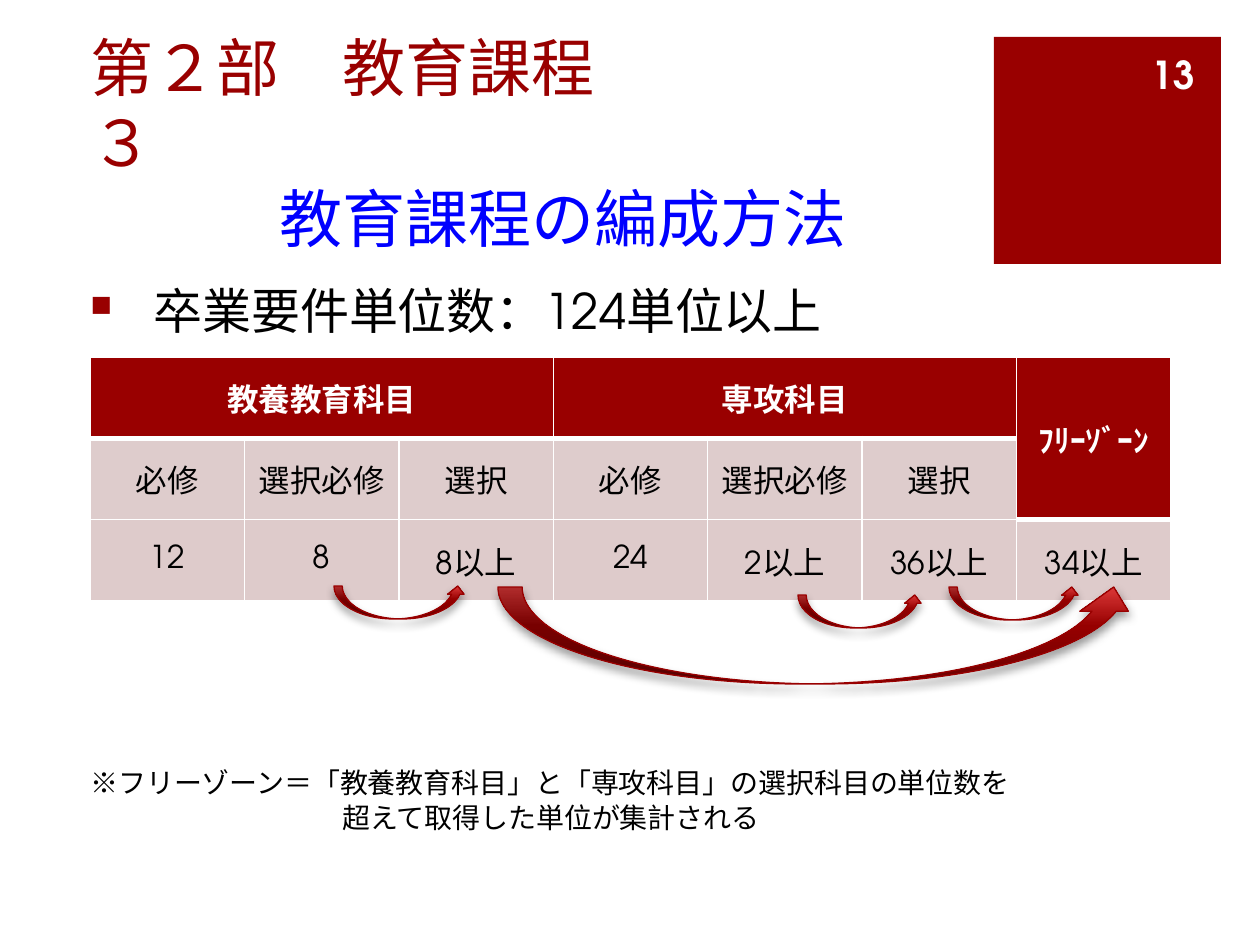
from lxml import etree
from copy import deepcopy
from pptx import Presentation
from pptx.dml.color import RGBColor
from pptx.enum.shapes import MSO_SHAPE
from pptx.enum.text import MSO_ANCHOR, PP_ALIGN
from pptx.oxml.ns import qn
from pptx.util import Emu, Pt

RECT, CURVED_UP = MSO_SHAPE.RECTANGLE, MSO_SHAPE.CURVED_UP_ARROW
MIDDLE, BOTTOM = MSO_ANCHOR.MIDDLE, MSO_ANCHOR.BOTTOM
LEFT, CENTER, RIGHT = PP_ALIGN.LEFT, PP_ALIGN.CENTER, PP_ALIGN.RIGHT
RED = RGBColor(0x99, 0x00, 0x00)
BLUE = RGBColor(0x00, 0x00, 0xFF)
BLACK = RGBColor(0x00, 0x00, 0x00)
WHITE = RGBColor(0xFF, 0xFF, 0xFF)
ROSE = RGBColor(0xDE, 0xCC, 0xCC)
ROSE_DARK = RGBColor(0xDE, 0xCB, 0xCB)
GRADIENT = [(0, RGBColor(0x6C, 0x00, 0x00)), (0.6, RGBColor(0x96, 0x00, 0x00)),
            (1, RGBColor(0xDC, 0x38, 0x38))]
FONT = "TeX Gyre Adventor"
HEADER = ["教養教育科目", "", "", "専攻科目", "", "", "ﾌﾘｰｿﾞｰﾝ"]
KINDS = ["必修", "選択必修", "選択"] * 2 + [""]
CREDITS = ["12", "8", "8以上", "24", "2以上", "36以上", "34以上"]
ARROWS = [(334, 586, 132, 33), (498, 587, 640, 97),
          (798, 595, 125, 33), (949, 587, 131, 33)]


def px(n):
    """Turn pixels at 126 to the inch into EMU."""
    return Emu(round(n * 914400 / 126))


def add_xml(parent, tag, **attrs):
    """Append a drawing element with the given attributes."""
    return etree.SubElement(parent, qn(tag), {k: str(v) for k, v in attrs.items()})


def write(p, text, align=LEFT, indent=0, spacing=None, **fmt):
    """Write one formatted run into a paragraph."""
    p.alignment = align
    if spacing:
        p.line_spacing = Pt(spacing)
    if indent:
        p._p.get_or_add_pPr().set("marL", str(px(indent)))
    r = p.add_run()
    r.text = text
    color = fmt.pop("color", BLACK)
    for name, value in {"name": FONT, **fmt}.items():
        setattr(r.font, name, value)
    r.font.color.rgb = color


def add_text(s, box, lines, anchor=MIDDLE):
    """Add a wrapping text box with one paragraph per line."""
    tf = s.shapes.add_textbox(*map(px, box)).text_frame
    tf.word_wrap = True
    tf.vertical_anchor = anchor
    for i, line in enumerate(lines):
        write(tf.add_paragraph() if i else tf.paragraphs[0], **line)
    return tf


def add_bullet(p, indent):
    """Give a paragraph a red square bullet with a hanging indent."""
    pPr = p._p.get_or_add_pPr()
    pPr.set("marL", str(px(indent)))
    pPr.set("indent", str(-px(indent)))
    add_xml(add_xml(pPr, "a:buClr"), "a:srgbClr", val=RED)
    add_xml(pPr, "a:buSzPct", val=60000)
    add_xml(pPr, "a:buChar", char="■")


def set_borders(cell, widths):
    """Draw white cell borders with a width in points for each side."""
    tcPr = cell._tc.get_or_add_tcPr()
    for i, (side, width) in enumerate(widths.items()):
        ln = add_xml(tcPr, f"a:ln{side}", w=Pt(width))
        add_xml(add_xml(ln, "a:solidFill"), "a:srgbClr", val=WHITE)
        tcPr.insert(i, ln)


def add_credit_table(s):
    """Add the table of required credits."""
    rows = [HEADER, KINDS, CREDITS]
    frame = s.shapes.add_table(3, 7, px(90), px(357), px(1081), px(244))
    table = frame.table
    for line in (*table.columns, *table.rows):
        if hasattr(line, "width"):
            line.width = Emu(px(1081) // 7)
        else:
            line.height = Emu(px(244) // 3)
    for i, row in enumerate(rows):
        for j, text in enumerate(row):
            cell = table.cell(i, j)
            depth = 2 if j == 6 else 1
            head = i < depth
            cell.vertical_anchor = MIDDLE
            cell.fill.solid()
            cell.fill.fore_color.rgb = RED if head else (ROSE, ROSE_DARK)[i - 1]
            set_borders(cell, {"L": 1, "R": 1, "T": 3 if i == depth else 1,
                               "B": 3 if head else 1})
            if text:
                write(cell.text_frame.paragraphs[0], text, CENTER, size=Pt(18),
                      bold=head, color=WHITE if head else BLACK)
    for first, last in [((0, 0), (0, 2)), ((0, 3), (0, 5)), ((0, 6), (1, 6))]:
        table.cell(*first).merge(table.cell(*last))


def add_block(s, box):
    """Add the plain red block behind the page number."""
    sp = s.shapes.add_shape(RECT, *map(px, box))
    sp.shadow.inherit = False
    sp.fill.solid()
    sp.fill.fore_color.rgb = RED
    sp.line.fill.background()


def add_curved_arrow(s, box):
    """Add a curved arrow with a red gradient and a soft shadow."""
    sp = s.shapes.add_shape(CURVED_UP, *map(px, box))
    sp.fill.gradient()
    sp.fill.gradient_angle = 90
    gs_list = sp._element.spPr.find(qn("a:gradFill")).find(qn("a:gsLst"))
    gs_list.append(deepcopy(gs_list[-1]))
    for stop, (position, color) in zip(sp.fill.gradient_stops, GRADIENT):
        stop.position = position
        stop.color.rgb = color
    sp.line.color.rgb = RED
    sp.line.width = Pt(0.75)
    sp.shadow.inherit = False
    effects = sp._element.spPr.find(qn("a:effectLst"))
    shadow = add_xml(effects, "a:outerShdw", blurRad=Pt(5.2), dist=Pt(3),
                     dir=5400000, rotWithShape=0)
    add_xml(add_xml(shadow, "a:srgbClr", val=BLACK), "a:alpha", val=40000)


def main():
    """Build the slide and save it."""
    prs = Presentation()
    prs.slide_width, prs.slide_height = px(1260), px(945)
    s = prs.slides.add_slide(prs.slide_layouts[6])
    add_block(s, (994, 37, 227, 227))
    add_credit_table(s)
    title = {"size": Pt(36), "color": RED, "spacing": 43}
    add_text(s, (78, 78, 914, 183), [
        {"text": "第２部　教育課程", **title},
        {"text": "３", **title},
        {"text": "教育課程の編成方法", **title, "color": BLUE, "indent": 189},
    ], BOTTOM)
    tf = add_text(s, (78, 278, 1013, 64),
                  [{"text": "卒業要件単位数：124単位以上", "size": Pt(28)}])
    add_bullet(tf.paragraphs[0], 63)
    note = {"size": Pt(16), "spacing": 20}
    add_text(s, (78, 756, 1013, 86), [
        {"text": "※フリーゾーン＝「教養教育科目」と「専攻科目」の選択科目の単位数を", **note},
        {"text": "超えて取得した単位が集計される", **note, "indent": 252},
    ])
    add_text(s, (1138, 49, 69, 50), [
        {"text": "13", "align": RIGHT, "size": Pt(22), "bold": True, "color": WHITE}])
    for box in ARROWS:
        add_curved_arrow(s, box)
    prs.save("out.pptx")


if __name__ == "__main__":
    main()
